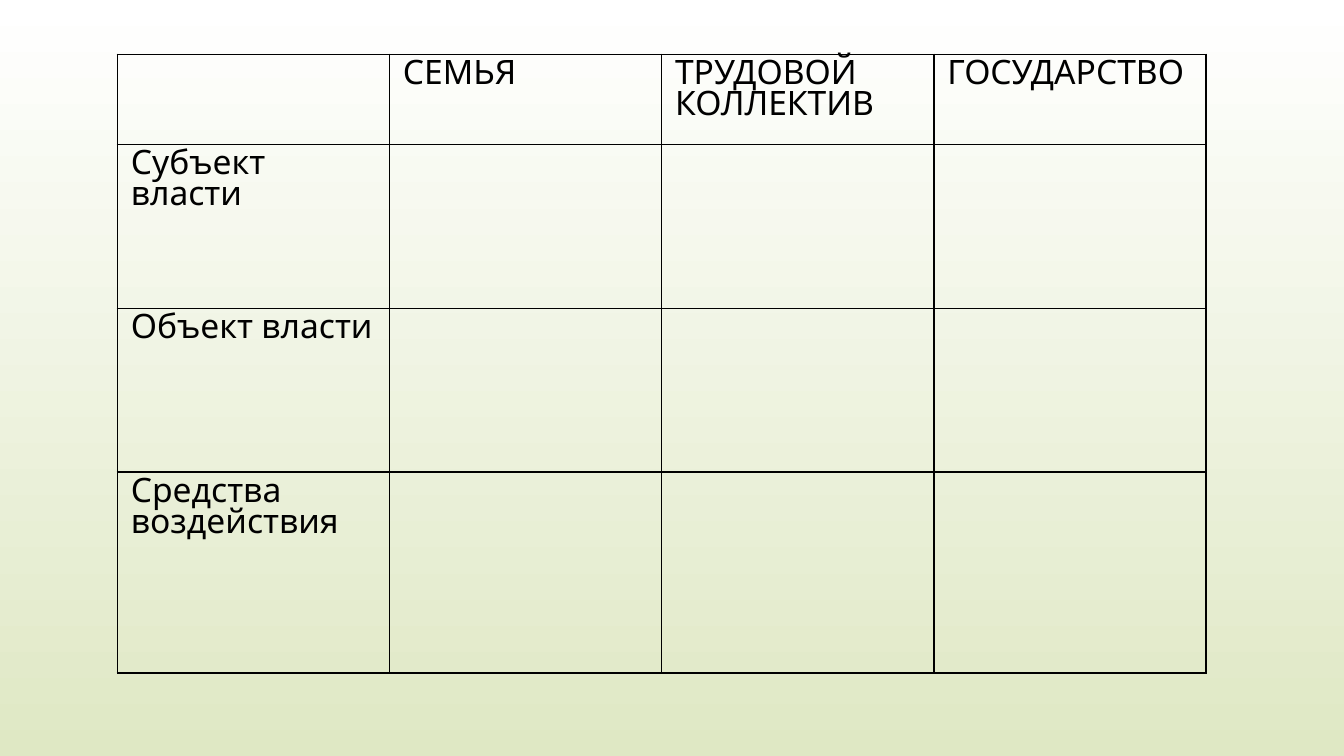
from lxml.etree import SubElement
from pptx import Presentation
from pptx.dml.color import RGBColor
from pptx.oxml.ns import qn
from pptx.util import Pt

COLORS = {"ink": "000000", "top": "FFFFFF", "bottom": "DFE8C4"}
FONT = "League Spartan"
HEADINGS = ["", "СЕМЬЯ", "ТРУДОВОЙ КОЛЛЕКТИВ", "ГОСУДАРСТВО"]
ASPECTS = ["Субъект власти", "Объект власти", "Средства воздействия"]
ROW_HEIGHTS = [48.2, 87.8, 87.8, 107.6]


def paint_background(slide):
    fill = slide.background.fill
    fill.gradient()
    fill.gradient_angle = 270
    for stop, name in zip(fill.gradient_stops, ("top", "bottom")):
        stop.color.rgb = RGBColor.from_string(COLORS[name])


def add_borders(cell):
    properties = cell._tc.get_or_add_tcPr()
    for side in ("lnL", "lnR", "lnT", "lnB"):
        border = SubElement(properties, qn(f"a:{side}"), w=str(Pt(1)))
        solid = SubElement(border, qn("a:solidFill"))
        SubElement(solid, qn("a:srgbClr"), val=COLORS["ink"])


def write_cell(cell, text):
    add_borders(cell)
    cell.fill.background()
    if text:
        run = cell.text_frame.paragraphs[0].add_run()
        run.text = text
        run.font.name = FONT
        run.font.size = Pt(18)
        run.font.color.rgb = RGBColor.from_string(COLORS["ink"])


def add_power_table(slide, left, top, width):
    rows = [HEADINGS] + [[aspect] + [""] * (len(HEADINGS) - 1) for aspect in ASPECTS]
    power_table = slide.shapes.add_table(
        len(rows), len(HEADINGS), Pt(left), Pt(top), Pt(width), Pt(sum(ROW_HEIGHTS))
    ).table
    power_table.first_row = False
    power_table.horz_banding = False
    for column in power_table.columns:
        column.width = Pt(width / len(HEADINGS))
    for row, height, texts in zip(power_table.rows, ROW_HEIGHTS, rows):
        row.height = Pt(height)
        for cell, text in zip(row.cells, texts):
            write_cell(cell, text)


def main():
    presentation = Presentation()
    presentation.slide_width = Pt(720)
    presentation.slide_height = Pt(405)
    slide = presentation.slides.add_slide(presentation.slide_layouts[6])
    paint_background(slide)
    add_power_table(slide, left=62.9, top=29.2, width=583.2)
    presentation.save("out.pptx")


if __name__ == "__main__":
    main()
